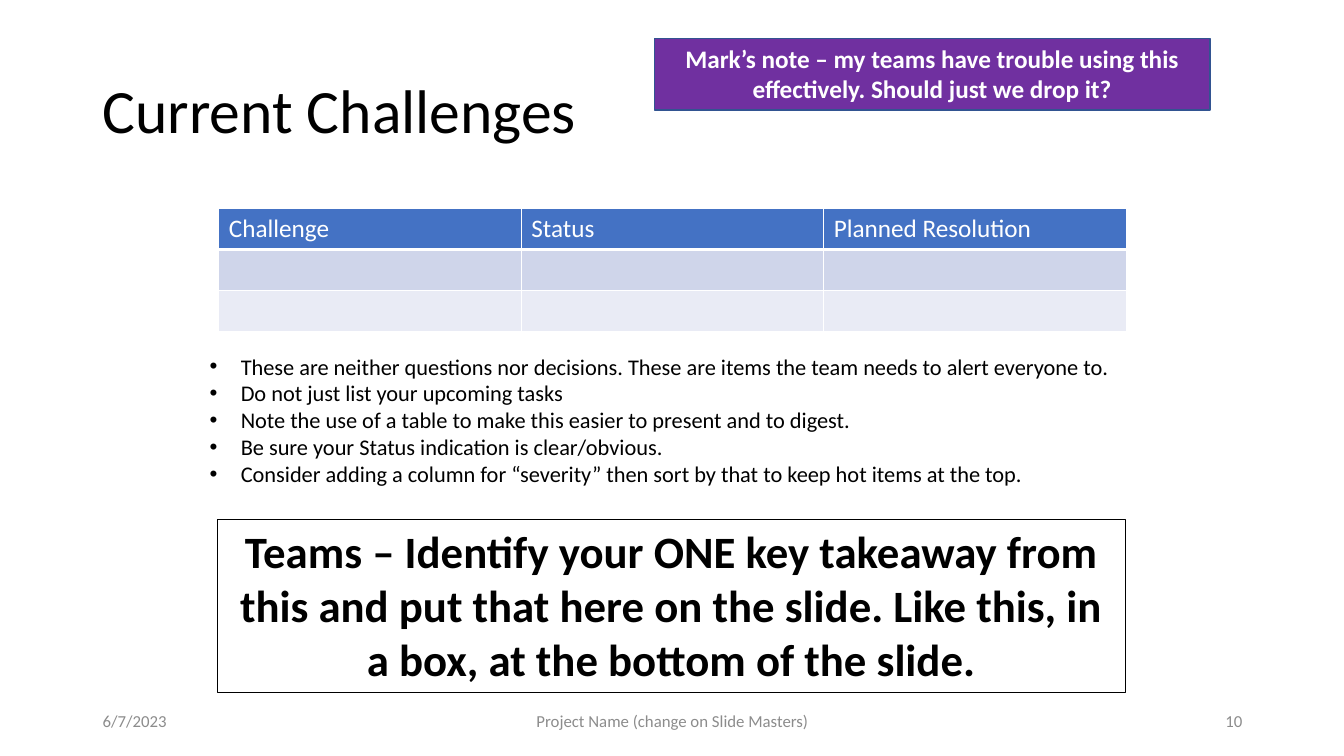
import dataclasses

import pptx
import pptx.dml.color
import pptx.enum.shapes
import pptx.enum.text
import pptx.oxml
import pptx.oxml.ns
import pptx.util

PX = 9144  # EMU per px, 100 px to the inch
ALIGN = pptx.enum.text.PP_ALIGN
ANCHOR = pptx.enum.text.MSO_ANCHOR
RECT = pptx.enum.shapes.MSO_SHAPE.RECTANGLE


@dataclasses.dataclass(frozen=True)
class Theme:
    face: str = "Calibri"
    ink: str = "000000"
    paper: str = "FFFFFF"
    head: str = "4472C4"
    bands: tuple = ("CFD5EA", "E9EBF5")
    note: str = "7030A0"
    edge: str = "325491"
    muted: str = "8C8C8C"
    title: int = 44
    key: int = 32
    body: int = 18
    tip: int = 16
    foot: int = 12


THEME = Theme()

HEADS = ["Challenge", "Status", "Planned Resolution"]
TIPS = [
    "These are neither questions nor decisions. These are items the team needs to alert everyone to.",
    "Do not just list your upcoming tasks",
    "Note the use of a table to make this easier to present and to digest.",
    "Be sure your Status indication is clear/obvious.",
    "Consider adding a column for “severity” then sort by that to keep hot items at the top.",
]
TAKEAWAY = (
    "Teams – Identify your ONE key takeaway from this and put that here on the slide. "
    "Like this, in a box, at the bottom of the slide."
)
NOTE = "Mark’s note – my teams have trouble using this effectively. Should just we drop it?"


def emu(box):
    return [n * PX for n in box]


def color(code):
    return pptx.dml.color.RGBColor.from_string(code)


def paint(fill, code):
    fill.solid()
    fill.fore_color.rgb = color(code)


def style(para, size, ink, bold=False, align=ALIGN.LEFT):
    para.alignment = align
    font = para.font
    font.name = THEME.face
    font.size = pptx.util.Pt(size)
    font.bold = bold
    font.color.rgb = color(ink)


def add_text(slide, box, text, size, ink, align=ALIGN.LEFT):
    """Add one line of text, centred on the height of the box."""
    frame = slide.shapes.add_textbox(*emu(box)).text_frame
    frame.word_wrap = True
    frame.vertical_anchor = ANCHOR.MIDDLE
    para = frame.paragraphs[0]
    para.text = text
    style(para, size, ink, align=align)
    return para


def add_panel(slide, box, text, size, ink, line, width, fill=None):
    """Add a framed rectangle with bold centred text."""
    panel = slide.shapes.add_shape(RECT, *emu(box))
    panel.shadow.inherit = False
    if fill:
        paint(panel.fill, fill)
    else:
        panel.fill.background()
    panel.line.color.rgb = color(line)
    panel.line.width = pptx.util.Pt(width)
    frame = panel.text_frame
    frame.word_wrap = True
    frame.vertical_anchor = ANCHOR.TOP
    para = frame.paragraphs[0]
    para.text = text
    style(para, size, ink, bold=True, align=ALIGN.CENTER)


def add_title(slide, box):
    para = add_text(slide, box, "Current Challenges", THEME.title, THEME.ink)
    para.line_spacing = 0.9


def add_edges(cell, base):
    """Draw white cell borders; base is the width of the lower one in points."""
    props = cell._tc.get_or_add_tcPr()
    for side, width in (("L", 1), ("R", 1), ("T", 1), ("B", base)):
        props.append(pptx.oxml.parse_xml(
            f'<a:ln{side} {pptx.oxml.ns.nsdecls("a")} w="{pptx.util.Pt(width)}">'
            f'<a:solidFill><a:srgbClr val="{THEME.paper}"/></a:solidFill></a:ln{side}>'
        ))


def add_grid(slide, box):
    fills = [THEME.head, *THEME.bands]
    left, top, width, height = emu(box)
    grid = slide.shapes.add_table(
        len(fills), len(HEADS), left, top, width, height
    ).table
    for col in grid.columns:
        col.width = width // len(HEADS)
    for i, fill in enumerate(fills):
        grid.rows[i].height = height // len(fills)
        for j, head in enumerate(HEADS):
            cell = grid.cell(i, j)
            add_edges(cell, 3 if i == 0 else 1)
            paint(cell.fill, fill)
            para = cell.text_frame.paragraphs[0]
            if i == 0:
                para.text = head
            style(para, THEME.body, THEME.paper if i == 0 else THEME.ink)


def add_bullet(para, indent):
    props = para._p.get_or_add_pPr()
    props.set("marL", str(indent * PX))
    props.set("indent", str(-indent * PX))
    space = pptx.oxml.ns.nsdecls("a")
    props.append(pptx.oxml.parse_xml(f'<a:buFont {space} typeface="Arial"/>'))
    props.append(pptx.oxml.parse_xml(f'<a:buChar {space} char="•"/>'))


def add_tips(slide, box):
    frame = slide.shapes.add_textbox(*emu(box)).text_frame
    frame.word_wrap = True
    frame.text = "\n".join(TIPS)
    for para in frame.paragraphs:
        add_bullet(para, 31)
        style(para, THEME.tip, THEME.ink)


def add_footer(slide, box):
    """Place date, project name and page number at left, centre and right."""
    left, top, width, height = box
    side, mid = 300, 450
    parts = [
        (left, side, "6/7/2023", ALIGN.LEFT),
        (left + (width - mid) // 2, mid, "Project Name (change on Slide Masters)", ALIGN.CENTER),
        (left + width - side, side, "10", ALIGN.RIGHT),
    ]
    for x, span, text, align in parts:
        add_text(slide, (x, top, span, height), text, THEME.foot, THEME.muted, align)


def main():
    deck = pptx.Presentation()
    deck.slide_width, deck.slide_height = emu((1333, 750))
    slide = deck.slides.add_slide(deck.slide_layouts[6])
    paint(slide.background.fill, THEME.paper)
    add_grid(slide, (217, 207, 900, 122))
    add_title(slide, (92, 40, 1150, 145))
    add_footer(slide, (92, 695, 1150, 40))
    add_tips(slide, (198, 345, 937, 145))
    add_panel(slide, (216, 515, 900, 172), TAKEAWAY, THEME.key, THEME.ink, THEME.ink, 0.75)
    add_panel(slide, (649, 38, 551, 71), NOTE, THEME.body, THEME.paper, THEME.edge, 1, THEME.note)
    deck.save("out.pptx")


if __name__ == "__main__":
    main()
